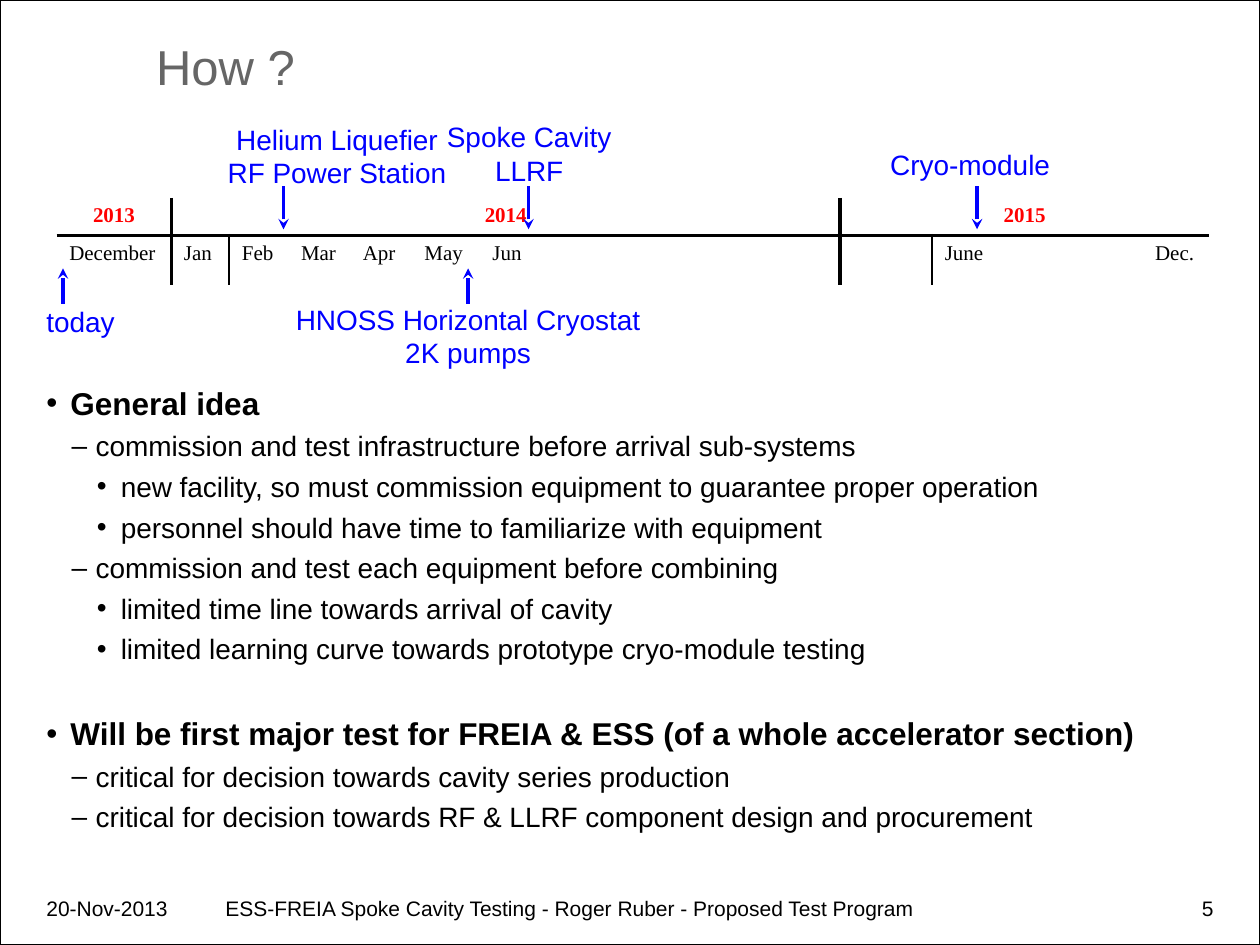
from lxml.etree import SubElement
from pptx import Presentation
from pptx.dml.color import RGBColor
from pptx.enum.shapes import MSO_CONNECTOR as Connector, MSO_SHAPE as Shape
from pptx.enum.text import MSO_ANCHOR as Anchor, PP_ALIGN as Align
from pptx.oxml.ns import qn
from pptx.util import Inches, Pt

# The slide is a grid of 100 columns by 75 rows, each cell 0.1 inch square
COLUMNS, ROWS = 100, 75
CELL = Inches(0.1)

BLACK, BLUE, RED, GREY = "000000", "0000FF", "FF0000", "666666"

# Timeline: column widths, text by column, and column edges with a rule
MONTH_WIDTHS = [9.1, 4.6, 4.7, 4.9, 4.9, 5.4, 4.6, 13.6, 5.1, 5.3, 7.3, 7.3, 9.4, 5.3]
MONTHS = {0: "December", 1: "Jan", 2: "Feb", 3: "Mar", 4: "Apr", 5: "May",
          6: "Jun", 11: "June", 13: "Dec."}
YEARS = [("2013", 0, 0), ("2014", 1, 9), ("2015", 10, 13)]
YEAR_RULE, MONTH_RULE = 2.25, 1.5
YEAR_EDGES, MONTH_EDGES = {1, 10}, {2, 11}

# Milestones: box, lines of text, alignment
MILESTONES = [
    ((8.5, 9.2, 36.5, 6.4), ["Helium Liquefier", "RF Power Station"], Align.CENTER),
    ((32.5, 9, 19, 6.4), ["Spoke Cavity", "LLRF"], Align.CENTER),
    ((20.9, 23.5, 32.5, 6.4), ["HNOSS Horizontal Cryostat", "2K pumps"], Align.CENTER),
    ((67.5, 11.2, 19, 3.7), ["Cryo-module"], Align.CENTER),
    ((2.7, 23.7, 25.2, 3.7), ["today"], Align.LEFT),
]
ARROWS_DOWN = [22.5, 41.95, 77.55]
ARROWS_UP = [5, 37.15]

# Outline: level, text, space before
OUTLINE = [
    (0, "General idea", 0),
    (1, "commission and test infrastructure before arrival sub-systems", 4),
    (2, "new facility, so must commission equipment to guarantee proper operation", 4),
    (2, "personnel should have time to familiarize with equipment", 4),
    (1, "commission and test each equipment before combining", 4),
    (2, "limited time line towards arrival of cavity", 4),
    (2, "limited learning curve towards prototype cryo-module testing", 4),
    (0, "Will be first major test for FREIA & ESS (of a whole accelerator section)", 28),
    (1, "critical for decision towards cavity series production", 4),
    (1, "critical for decision towards RF & LLRF component design and procurement", 4),
]
BULLETS = "•–•"

FOOTER = [
    ((2.7, 70.6, 12.6, 2.8), "20-Nov-2013", Align.LEFT),
    ((16.9, 70.6, 71.7, 2.8),
     "ESS-FREIA Spoke Cavity Testing - Roger Ruber - Proposed Test Program", Align.LEFT),
    ((90.2, 70.6, 7.1, 2.8), "5", Align.RIGHT),
]


def grid(*cells):
    return [round(cell * CELL) for cell in cells]


def color(value):
    return RGBColor.from_string(value)


def style(paragraph, size, hex_color, bold=False, font="Arial", align=Align.LEFT):
    paragraph.alignment = align
    for run in paragraph.runs:
        run.font.name = font
        run.font.size = Pt(size)
        run.font.bold = bold
        run.font.color.rgb = color(hex_color)


def add_text(slide, box, lines, size, hex_color, align=Align.LEFT):
    frame = slide.shapes.add_textbox(*grid(*box)).text_frame
    frame.word_wrap = True
    frame.text = "\n".join(lines)
    for paragraph in frame.paragraphs:
        style(paragraph, size, hex_color, align=align)
    return frame


def add_frame(slide):
    shape = slide.shapes.add_shape(Shape.RECTANGLE, *grid(0, 0, COLUMNS, ROWS))
    shape.shadow.inherit = False
    shape.fill.background()
    shape.line.color.rgb = color(BLACK)
    shape.line.width = Pt(0.75)


def add_arrow(slide, column, tip, end):
    connector = slide.shapes.add_connector(Connector.STRAIGHT, *grid(column, tip, column, end))
    connector.line.color.rgb = color(BLUE)
    connector.line.width = Pt(2)
    SubElement(connector.line._get_or_add_ln(), qn("a:headEnd"), type="stealth")
    SubElement(connector._element.spPr, qn("a:effectLst"))


def add_outline(slide, box):
    frame = add_text(slide, box, [text for _, text, _ in OUTLINE], 16, BLACK)
    for paragraph, (level, _, space) in zip(frame.paragraphs, OUTLINE):
        properties = paragraph._p.get_or_add_pPr()
        properties.set("marL", str(Inches(0.19 + 0.2 * level)))
        properties.set("indent", str(-Inches(0.19)))
        paragraph.space_before = Pt(space)
        SubElement(properties, qn("a:buFont"), typeface="Arial")
        SubElement(properties, qn("a:buChar"), char=BULLETS[level])
        if level == 0:
            style(paragraph, 18, BLACK, bold=True)


def edge_width(edge, row):
    if edge in YEAR_EDGES:
        return YEAR_RULE
    return MONTH_RULE if row == 1 and edge in MONTH_EDGES else 0


def set_borders(cell, widths):
    properties = cell._tc.get_or_add_tcPr()
    for side, width in zip("LRTB", widths):
        line = SubElement(properties, qn(f"a:ln{side}"), w=str(Pt(width)))
        if width:
            fill = SubElement(line, qn("a:solidFill"))
            SubElement(fill, qn("a:srgbClr"), val=BLACK)
        else:
            SubElement(line, qn("a:noFill"))


def add_timeline(slide):
    box = grid(4.5, 15.7, sum(MONTH_WIDTHS), 6.8)
    table = slide.shapes.add_table(2, len(MONTH_WIDTHS), *box).table
    table.first_row = table.horz_banding = False
    for column, width in zip(table.columns, MONTH_WIDTHS):
        column.width = grid(width)[0]
    for row, height in zip(table.rows, grid(2.9, 3.9)):
        row.height = height

    # Rules, and a small size in empty cells so that the rows keep their height
    for row in range(2):
        for column in range(len(MONTH_WIDTHS)):
            cell = table.cell(row, column)
            across = (0, YEAR_RULE) if row == 0 else (YEAR_RULE, 0)
            set_borders(cell, (edge_width(column, row), edge_width(column + 1, row), *across))
            cell.fill.background()
            SubElement(cell.text_frame.paragraphs[0]._p, qn("a:endParaRPr"), sz="1200")

    # Years above, months below
    for year, first, last in YEARS:
        cell = table.cell(0, first)
        if last > first:
            cell.merge(table.cell(0, last))
        cell.text = year
        style(cell.text_frame.paragraphs[0], 12, RED, True, "Times New Roman", Align.CENTER)
    for column, month in MONTHS.items():
        cell = table.cell(1, column)
        cell.text = month
        style(cell.text_frame.paragraphs[0], 12, BLACK, font="Times New Roman")


def main():
    presentation = Presentation()
    presentation.slide_width, presentation.slide_height = grid(COLUMNS, ROWS)
    slide = presentation.slides.add_slide(presentation.slide_layouts[6])

    # Frame, title and outline
    add_frame(slide)
    title = add_text(slide, (11.4, 2.1, 84, 5.5), ["How ?"], 28, GREY)
    title.vertical_anchor = Anchor.BOTTOM
    title.margin_bottom = 0
    add_outline(slide, (2.7, 30, 94.5, 39))

    # Footer
    for box, text, align in FOOTER:
        add_text(slide, box, [text], 12, BLACK, align)

    # Timeline with its milestones
    add_timeline(slide)
    for box, lines, align in MILESTONES:
        add_text(slide, box, lines, 16, BLUE, align)
    for column in ARROWS_DOWN:
        add_arrow(slide, column, 18.2, 14.8)
    for column in ARROWS_UP:
        add_arrow(slide, column, 21.3, 24.1)

    presentation.save("out.pptx")


if __name__ == "__main__":
    main()
